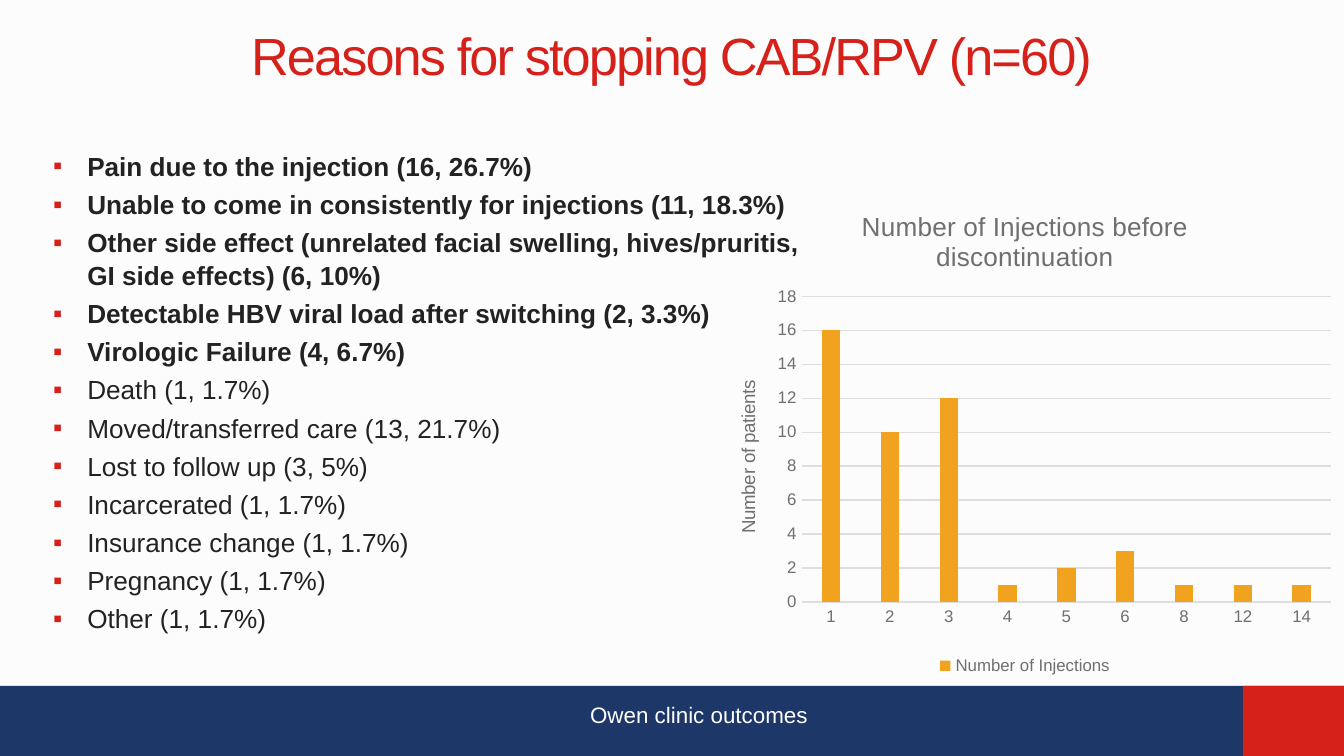
from lxml import etree
from pptx import Presentation
from pptx import util as u
from pptx.chart.data import CategoryChartData
from pptx.dml.color import RGBColor
from pptx.enum import chart as charts, shapes, text
from pptx.oxml import parse_xml
from pptx.oxml.ns import nsdecls, qn

EMU_PER_PX = 914400 / 134.4
FONT = "Arial"
RED = RGBColor(0xD6, 0x20, 0x1A)
NAVY = RGBColor(0x1C, 0x37, 0x68)
ORANGE = RGBColor(0xF1, 0xA2, 0x1F)
INK = RGBColor(0x22, 0x22, 0x22)
GREY = RGBColor(0x6F, 0x6F, 0x6F)
RULE = RGBColor(0xDE, 0xDE, 0xDE)
PAPER = RGBColor(0xFC, 0xFC, 0xFC)
WHITE = RGBColor(0xFF, 0xFF, 0xFF)

KEY_REASONS = [
    "Pain due to the injection (16, 26.7%)",
    "Unable to come in consistently for injections (11, 18.3%)",
    "Other side effect (unrelated facial swelling, hives/pruritis, "
    "GI side effects) (6, 10%)",
    "Detectable HBV viral load after switching (2, 3.3%)",
    "Virologic Failure (4, 6.7%)",
]
OTHER_REASONS = [
    "Death (1, 1.7%)",
    "Moved/transferred care (13, 21.7%)",
    "Lost to follow up (3, 5%)",
    "Incarcerated (1, 1.7%)",
    "Insurance change (1, 1.7%)",
    "Pregnancy (1, 1.7%)",
    "Other (1, 1.7%)",
]
PATIENTS_BY_INJECTIONS = {
    "1": 16, "2": 10, "3": 12, "4": 1, "5": 2, "6": 3, "8": 1, "12": 1, "14": 1,
}


def px(length):
    return u.Emu(round(length * EMU_PER_PX))


def box(*lengths):
    return [px(length) for length in lengths]


def set_font(font, size, color, bold=False):
    font.name = FONT
    font.size = u.Pt(size)
    font.color.rgb = color
    font.bold = bold


def add_band(slide, left, width, color):
    band = slide.shapes.add_shape(
        shapes.MSO_SHAPE.RECTANGLE, *box(left, 686, width, 70))
    band.shadow.inherit = False
    band.fill.solid()
    band.fill.fore_color.rgb = color
    band.line.fill.background()


def write_centred(shape, words, size, color):
    frame = shape.text_frame
    frame.text = words
    frame.word_wrap = True
    frame.auto_size = text.MSO_AUTO_SIZE.NONE
    frame.vertical_anchor = text.MSO_ANCHOR.MIDDLE
    paragraph = frame.paragraphs[0]
    paragraph.alignment = text.PP_ALIGN.CENTER
    set_font(paragraph.runs[0].font, size, color)
    return paragraph.runs[0]


def add_title(slide, words):
    title = slide.shapes.title
    title.left, title.top, title.width, title.height = box(46, 27, 1251, 55)
    run = write_centred(title, words, 28, RED)
    run.font._element.set("spc", "-100")


def add_bullet(paragraph):
    properties = paragraph._p.get_or_add_pPr()
    properties.set("marL", str(px(51)))
    properties.set("indent", str(-px(34)))
    color = etree.SubElement(properties, qn("a:buClr"))
    etree.SubElement(color, qn("a:srgbClr")).set("val", str(RED))
    etree.SubElement(properties, qn("a:buFont")).set("typeface", FONT)
    etree.SubElement(properties, qn("a:buChar")).set("char", "▪")


def add_reasons(slide):
    frame = slide.shapes.add_textbox(*box(23, 142, 796, 525)).text_frame
    frame.word_wrap = True
    reasons = KEY_REASONS + OTHER_REASONS
    frame.text = "\n".join(reasons)
    for index, paragraph in enumerate(frame.paragraphs):
        add_bullet(paragraph)
        paragraph.line_spacing = 1.05
        paragraph.space_before = u.Pt(2.8 if index else 0)
        set_font(paragraph.runs[0].font, 14, INK, index < len(KEY_REASONS))


def write_chart_title(titled, words, size):
    frame = titled.text_frame
    frame.text = words
    set_font(frame.paragraphs[0].runs[0].font, size, GREY)


def place_plot(chart, **fractions):
    """Fix the inner plot area, as fractions of the chart's size."""
    plot_area = chart._chartSpace.chart.plotArea
    for layout in plot_area.findall(qn("c:layout")):
        plot_area.remove(layout)
    sizes = "".join(f'<c:{name} val="{value}"/>'
                    for name, value in fractions.items())
    plot_area.insert(0, parse_xml(
        f'<c:layout {nsdecls("c")}><c:manualLayout>'
        '<c:layoutTarget val="inner"/><c:xMode val="edge"/>'
        f'<c:yMode val="edge"/>{sizes}</c:manualLayout></c:layout>'))


def add_injection_chart(slide):
    data = CategoryChartData()
    data.categories = list(PATIENTS_BY_INJECTIONS)
    data.add_series("Number of Injections", PATIENTS_BY_INJECTIONS.values())
    chart = slide.shapes.add_chart(
        charts.XL_CHART_TYPE.COLUMN_CLUSTERED, *box(706, 188, 638, 493),
        data).chart
    set_font(chart.font, 10, INK)
    write_chart_title(
        chart.chart_title, "Number of Injections before discontinuation", 14)
    chart.chart_title.include_in_layout = False

    # Columns
    plot = chart.plots[0]
    plot.vary_by_categories = False
    plot.gap_width = 219
    plot.overlap = -27
    fill = plot.series[0].format.fill
    fill.solid()
    fill.fore_color.rgb = ORANGE

    # Axes
    category_axis, value_axis = chart.category_axis, chart.value_axis
    for axis in (category_axis, value_axis):
        axis.major_tick_mark = charts.XL_TICK_MARK.NONE
        axis.minor_tick_mark = charts.XL_TICK_MARK.NONE
        set_font(axis.tick_labels.font, 9, GREY)
    value_axis.minimum_scale = 0
    value_axis.maximum_scale = 18
    value_axis.major_unit = 2
    value_axis.format.line.fill.background()
    for line in (category_axis.format.line,
                 value_axis.major_gridlines.format.line):
        line.color.rgb = RULE
        line.width = u.Pt(0.75)
    write_chart_title(value_axis.axis_title, "Number of patients", 10)

    # Legend and plot area
    chart.has_legend = True
    chart.legend.position = charts.XL_LEGEND_POSITION.BOTTOM
    chart.legend.include_in_layout = False
    set_font(chart.legend.font, 9, GREY)
    place_plot(chart, x=0.15, y=0.22, w=0.83, h=0.62)


def main():
    presentation = Presentation()
    presentation.slide_width, presentation.slide_height = box(1344, 756)
    slide = presentation.slides.add_slide(presentation.slide_layouts[5])
    slide.background.fill.solid()
    slide.background.fill.fore_color.rgb = PAPER

    # Footer bands
    add_band(slide, 0, 1344, NAVY)
    add_band(slide, 1243, 101, RED)

    # Content
    add_title(slide, "Reasons for stopping CAB/RPV (n=60)")
    add_reasons(slide)
    footer = slide.shapes.add_textbox(*box(267, 703, 864, 23))
    write_centred(footer, "Owen clinic outcomes", 12, WHITE)
    add_injection_chart(slide)

    presentation.save("out.pptx")


if __name__ == "__main__":
    main()
